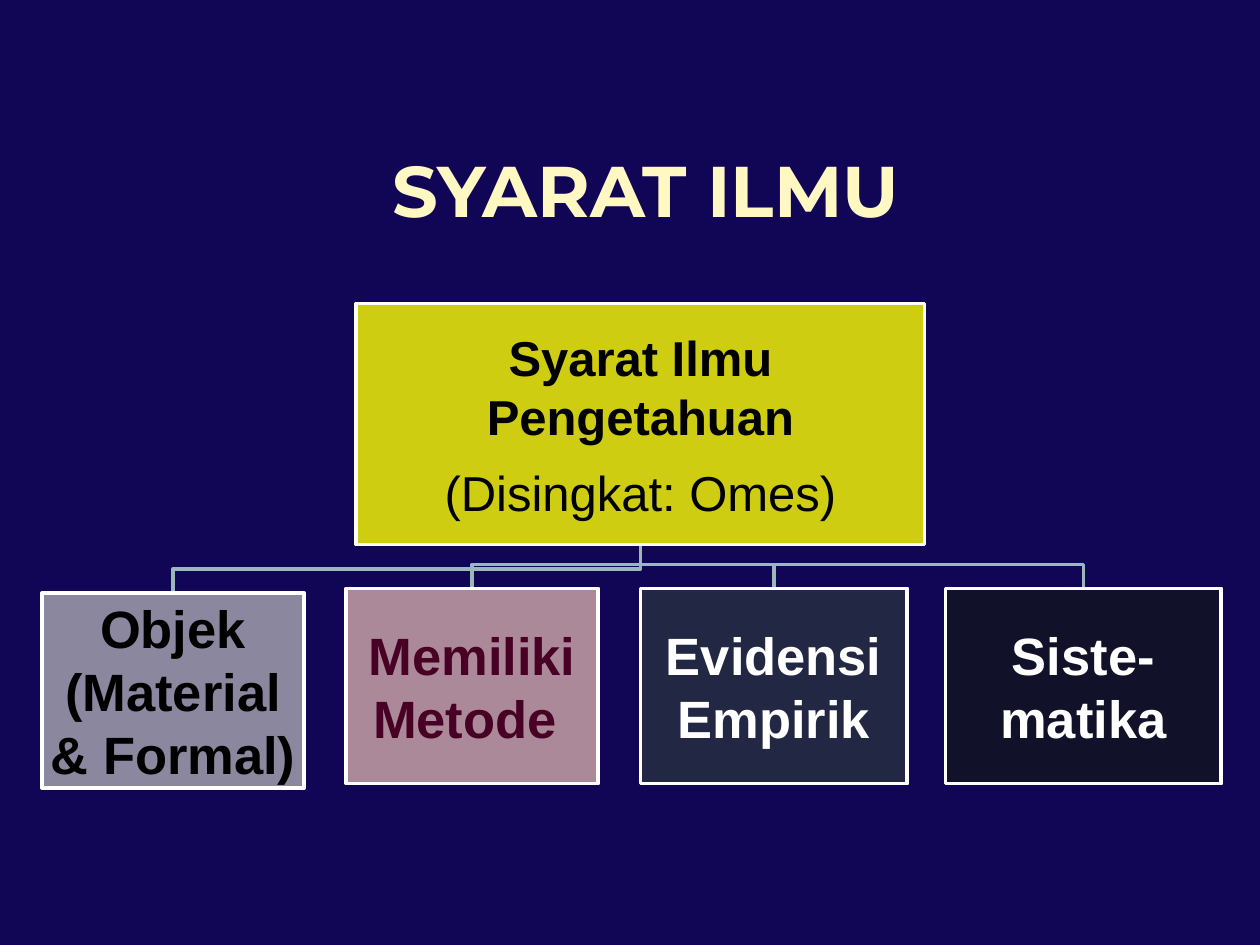
from pptx import Presentation
from pptx.dml.color import RGBColor
from pptx.enum.shapes import MSO_SHAPE as Shape
from pptx.enum.text import MSO_ANCHOR as Anchor, PP_ALIGN as Align
from pptx.oxml import parse_xml
from pptx.oxml.ns import nsdecls
from pptx.util import Cm, Pt

NAVY = RGBColor(0x11, 0x06, 0x56)
CREAM = RGBColor(0xFF, 0xF8, 0xC2)
YELLOW = RGBColor(0xFF, 0xFF, 0x00)
GREY = RGBColor(0xBF, 0xBF, 0xBF)
PINK = RGBColor(0xED, 0xC1, 0xB6)
SLATE = RGBColor(0x2A, 0x37, 0x3D)
INK = RGBColor(0x11, 0x16, 0x18)
TEAL = RGBColor(0x9D, 0xB7, 0xB8)
WINE = RGBColor(0x48, 0x00, 0x24)
BLACK = RGBColor(0x00, 0x00, 0x00)
WHITE = RGBColor(0xFF, 0xFF, 0xFF)

# Boxes are (left, top, width, height) in cm.
TITLE = (1.91, 1.48, 22.23, 4.65)
ROOT = (7.18, 6.12, 11.46, 4.86)
ROOT_LINES = [("Syarat Ilmu Pengetahuan", True), ("(Disingkat: Omes)", False)]
LEAVES = [
    ("Objek (Material & Formal)", (0.85, 11.95, 5.28, 3.94), GREY, BLACK),
    ("Memiliki Metode ", (6.98, 11.86, 5.08, 3.94), PINK, WINE),
    ("Evidensi Empirik", (12.91, 11.86, 5.38, 3.94), SLATE, WHITE),
    ("Siste-matika", (19.06, 11.86, 5.56, 3.94), INK, WHITE),
]
DROP = 0.48  # from the branch bar down to a leaf


def set_all(item, values):
    for name, value in values.items():
        setattr(item, name, value)


def write(frame, lines, form):
    """Fill a text frame with centred (text, bold) lines."""
    set_all(frame, {"word_wrap": True, "vertical_anchor": Anchor.MIDDLE})
    for i, (text, bold) in enumerate(lines):
        para = frame.add_paragraph() if i else frame.paragraphs[0]
        set_all(para, {"alignment": Align.CENTER, "space_after": Pt(form["after"])})
        run = para.add_run()
        run.text = text
        set_all(run.font, {"name": form["name"], "size": Pt(form["size"]), "bold": bold})
        run.font.color.rgb = form["color"]


def add_title(slide, box):
    frame = slide.shapes.add_textbox(*map(Cm, box)).text_frame
    write(frame, [("SYARAT ILMU", True)],
          {"name": "Montserrat", "size": 41, "color": CREAM, "after": 0})


def add_node(slide, box, lines, fill, alpha, color, size):
    """Draw a see-through box; alpha is its opacity in percent."""
    node = slide.shapes.add_shape(Shape.RECTANGLE, *map(Cm, box))
    node.shadow.inherit = False
    node.fill.solid()
    node.fill.fore_color.rgb = fill
    tint = node.fill._xPr.find(".//{*}srgbClr")
    tint.append(parse_xml(f'<a:alpha {nsdecls("a")} val="{alpha * 1000}"/>'))
    node.line.color.rgb = WHITE
    node.line.width = Pt(2)
    frame = node.text_frame
    sides = ("left", "top", "right", "bottom")
    set_all(frame, {f"margin_{side}": Cm(0.05) for side in sides})
    write(frame, lines,
          {"name": "Arial", "size": size, "color": color, "after": size * 0.35})


def add_branch(slide, root, leaf):
    """Join the bottom of the root to the top of a leaf with an elbow."""
    x, y = root[0] + root[2] / 2, root[1] + root[3]
    end, top = leaf[0] + leaf[2] / 2, leaf[1]
    bar = top - DROP
    pen = slide.shapes.build_freeform(Cm(x), Cm(y))
    pen.add_line_segments([(Cm(a), Cm(b)) for a, b in
                           ((x, bar), (end, bar), (end, top))], close=False)
    path = pen.convert_to_shape()
    path.shadow.inherit = False
    path.fill.background()
    path.line.color.rgb = TEAL
    path.line.width = Pt(2)


def add_chart(slide, root, leaves):
    for _, box, _, _ in leaves:
        add_branch(slide, root, box)
    add_node(slide, root, ROOT_LINES, YELLOW, 80, BLACK, 28)
    for text, box, fill, color in leaves:
        add_node(slide, box, [(text, True)], fill, 70, color, 30)


def main():
    deck = Presentation()
    set_all(deck, {"slide_width": Cm(25.4), "slide_height": Cm(19.05)})
    slide = deck.slides.add_slide(deck.slide_layouts[6])
    back = slide.background.fill
    back.solid()
    back.fore_color.rgb = NAVY
    add_title(slide, TITLE)
    add_chart(slide, ROOT, LEAVES)
    deck.save("out.pptx")


if __name__ == "__main__":
    main()
